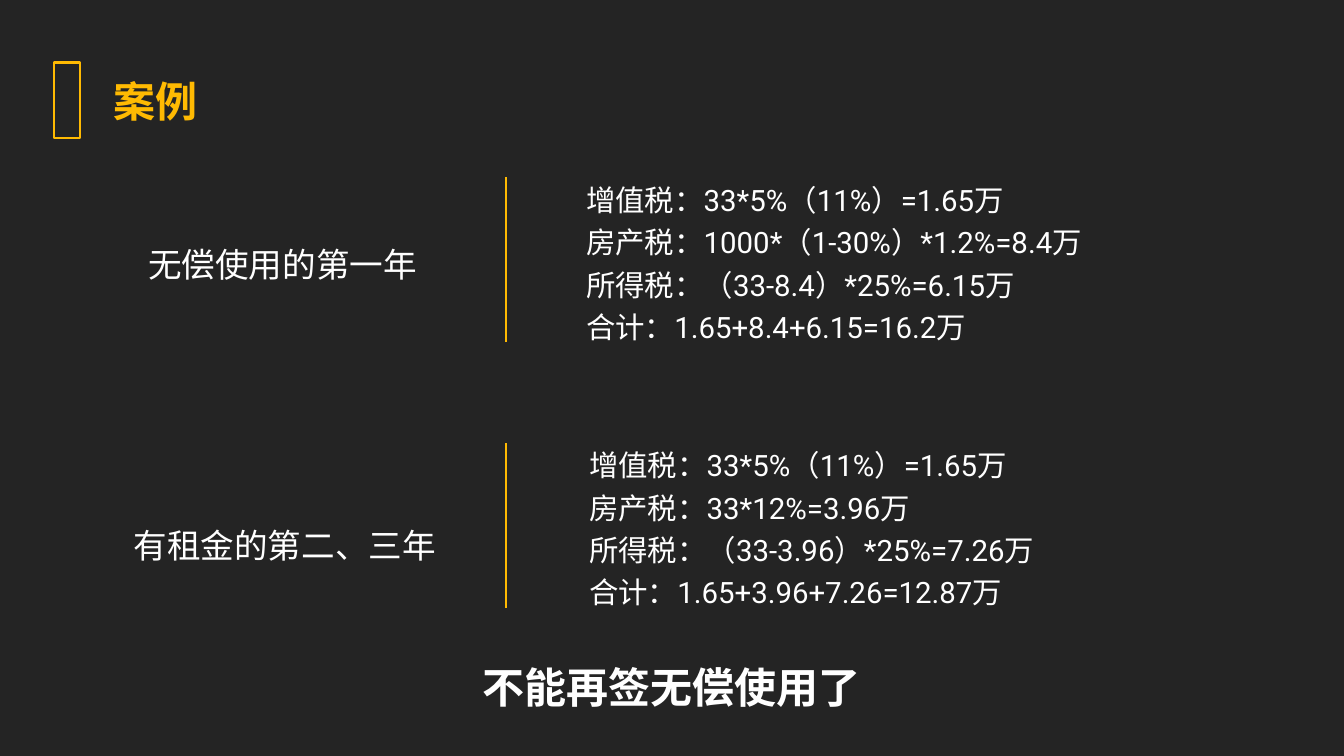
from lxml import etree
from pptx import Presentation
from pptx import util as u
from pptx.dml.color import RGBColor
from pptx.enum import shapes, text
from pptx.oxml.ns import qn

SCALE = 9144
GOLD, WHITE, DARK = "FFBA02", "FFFFFF", "242424"
MID, LEFT = text.PP_ALIGN.CENTER, text.PP_ALIGN.LEFT


def px(n):
    """Turn px, a hundred to the inch, into EMU."""
    return u.Emu(n * SCALE)


def paint(part, color):
    """Give a fill a solid hex colour."""
    part.solid()
    part.fore_color.rgb = RGBColor.from_string(color)


def write(slide, box, lines, size, font, color=WHITE, bold=False,
          align=LEFT, inset=6, space=1.2, wrap=True, grow=True):
    """Place lines of text, centred vertically in a box."""
    frame = slide.shapes.add_textbox(*map(px, box)).text_frame
    frame.word_wrap = wrap
    frame.auto_size = (text.MSO_AUTO_SIZE.SHAPE_TO_FIT_TEXT if grow
                       else text.MSO_AUTO_SIZE.NONE)
    frame.vertical_anchor = text.MSO_ANCHOR.MIDDLE
    frame.margin_left = frame.margin_right = px(inset)
    frame.margin_top = frame.margin_bottom = px(inset)
    frame.text = "\n".join(lines)
    for para in frame.paragraphs:
        para.alignment = align
        para.line_spacing = space
        para.font.size = u.Pt(size)
        para.font.name = font
        para.font.bold = bold
        paint(para.font.fill, color)


def head(slide, left, top, title):
    """Draw the hollow gold bar and the heading beside it."""
    bar = slide.shapes.add_shape(shapes.MSO_SHAPE.RECTANGLE,
                                 px(left), px(top), px(51), px(150))
    bar.shadow.inherit = False
    bar.fill.background()
    paint(bar.line.fill, GOLD)
    bar.line.width = u.Pt(3)
    write(slide, (left + 108, top + 9, 184, 132), [title], 60, "Arial",
          GOLD, True, MID, 8, 1.0, wrap=False)


def case(slide, top, name, label, sums, lines):
    """Draw one case: its name, the gold rule and the tax sums."""
    write(slide, (label[0], top + label[1], 613, 103), [name], 48, "Roboto")
    rule = slide.shapes.add_connector(shapes.MSO_CONNECTOR.STRAIGHT,
                                      px(1004), px(top + 327),
                                      px(1004), px(top))
    paint(rule.line.fill, GOLD)
    rule.line.width = u.Pt(2)
    etree.SubElement(rule._element.spPr, qn("a:effectLst"))
    write(slide, (sums[0], top - 28, sums[1], 382), lines, 42, "Roboto",
          wrap=False)


def close(slide, box, words):
    """Write the closing statement in its box."""
    write(slide, box, [words], 60, "Arial", bold=True, align=MID,
          inset=8, space=1.0, grow=False)


def main():
    """Build and save the slide."""
    deck = Presentation()
    deck.slide_width, deck.slide_height = px(2667), px(1500)
    slide = deck.slides.add_slide(deck.slide_layouts[6])
    paint(slide.background.fill, DARK)
    head(slide, 108, 124, "案例")
    case(slide, 352, "无偿使用的第一年", (288, 112), (1157, 1079), [
        "增值税：33*5%（11%）=1.65万",
        "房产税：1000*（1-30%）*1.2%=8.4万",
        "所得税：（33-8.4）*25%=6.15万",
        "合计：1.65+8.4+6.15=16.2万",
    ])
    case(slide, 879, "有租金的第二、三年", (259, 143), (1163, 981), [
        "增值税：33*5%（11%）=1.65万",
        "房产税：33*12%=3.96万",
        "所得税：（33-3.96）*25%=7.26万",
        "合计：1.65+3.96+7.26=12.87万",
    ])
    close(slide, (433, 1304, 1800, 118), "不能再签无偿使用了")
    deck.save("out.pptx")


if __name__ == "__main__":
    main()
